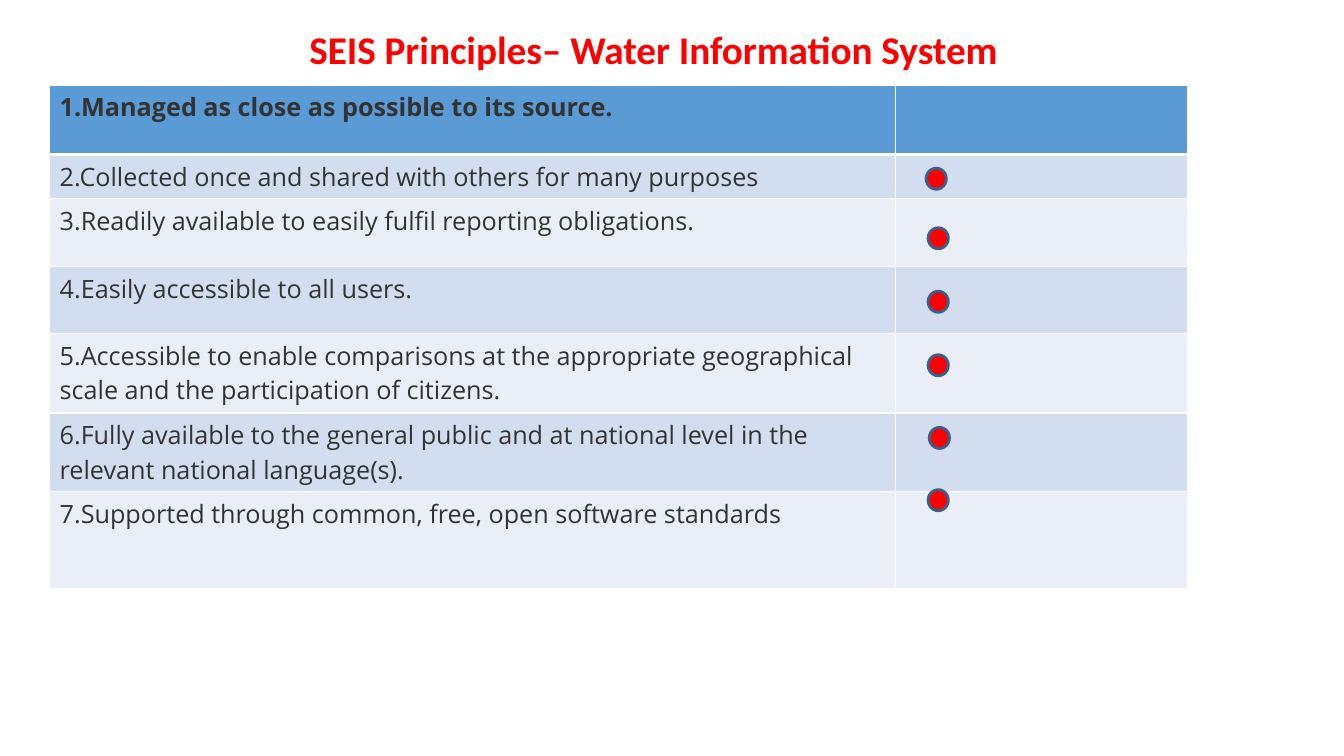
from lxml.etree import SubElement
from pptx import Presentation
from pptx.dml.color import RGBColor
from pptx.enum.shapes import MSO_SHAPE
from pptx.enum.text import MSO_ANCHOR, MSO_AUTO_SIZE, PP_ALIGN
from pptx.oxml import parse_xml
from pptx.oxml.ns import nsdecls, qn
from pptx.util import Cm, Pt

THEME = {
    "red": RGBColor(0xFF, 0x00, 0x00),
    "dot_line": RGBColor(0x3A, 0x5F, 0x8C),
    "header": RGBColor(0x5B, 0x9B, 0xD5),
    "bands": [RGBColor(0xEA, 0xEF, 0xF7), RGBColor(0xD2, 0xDE, 0xEF)],
    "border": "FFFFFF",
    "title": {"name": "Calibri", "size": Pt(28), "bold": True},
    "body": {"name": "Open Sans", "size": Pt(18)},
    "text": RGBColor(0x33, 0x33, 0x33),
}

# Wording and row height in cm; the number of the first row is automatic
PRINCIPLES = [
    ("Managed as close as possible to its source.", 1.75),
    ("2.Collected once and shared with others for many purposes", 1.09),
    ("3.Readily available to easily fulfil reporting obligations.", 1.7),
    ("4.Easily accessible to all users.", 1.7),
    ("5.Accessible to enable comparisons at the appropriate geographical "
     "scale and the participation of citizens.", 2),
    ("6.Fully available to the general public and at national level in the "
     "relevant national language(s).", 1.97),
    ("7.Supported through common, free, open software standards", 2.44),
]
COLUMN_WIDTHS = [21.31, 7.37]
DOTS = [(23.34, 4.24), (23.39, 5.74), (23.39, 7.34),
        (23.39, 8.94), (23.42, 10.77), (23.39, 12.34)]


def style_font(font, values, color):
    for name, value in values.items():
        setattr(font, name, value)
    font.color.rgb = color


def set_borders(cell, widths):
    """Draw cell borders; widths are points for left, right, top, bottom."""
    properties = cell._tc.get_or_add_tcPr()
    for index, (side, width) in enumerate(zip("LRTB", widths)):
        properties.insert(index, parse_xml(
            f'<a:ln{side} {nsdecls("a")} w="{Pt(width)}"><a:solidFill>'
            f'<a:srgbClr val="{THEME["border"]}"/></a:solidFill></a:ln{side}>'))


deck = Presentation()
deck.slide_width, deck.slide_height = Cm(33.87), Cm(19.05)
page = deck.slides.add_slide(deck.slide_layouts[5])

# Title
title = page.shapes.title
title.left, title.top, title.width, title.height = Cm(7.54), Cm(0.64), Cm(24.64), Cm(3.56)
frame = title.text_frame
frame.text = "SEIS Principles– Water Information System"
frame_format = {"vertical_anchor": MSO_ANCHOR.TOP, "word_wrap": True,
                "auto_size": MSO_AUTO_SIZE.NONE}
for name, value in frame_format.items():
    setattr(frame, name, value)
para = frame.paragraphs[0]
para.alignment, para.line_spacing = PP_ALIGN.LEFT, 0.9
style_font(para.runs[0].font, THEME["title"], THEME["red"])

# Table of principles
table = page.shapes.add_table(
    len(PRINCIPLES), len(COLUMN_WIDTHS), Cm(1.25), Cm(2.14),
    Cm(sum(COLUMN_WIDTHS)), Cm(sum(height for _, height in PRINCIPLES))).table
for column, width in zip(table.columns, COLUMN_WIDTHS):
    column.width = Cm(width)

for index, (wording, height) in enumerate(PRINCIPLES):
    table.rows[index].height = Cm(height)
    is_header = index == 0
    for cell in table.rows[index].cells:
        cell.fill.solid()
        cell.fill.fore_color.rgb = THEME["header"] if is_header else THEME["bands"][index % 2]
        set_borders(cell, (1, 1, 3 if index == 1 else 1, 3 if is_header else 1))
    para = table.cell(index, 0).text_frame.paragraphs[0]
    span = para.add_run()
    span.text = wording
    style_font(span.font, THEME["body"] | {"bold": is_header}, THEME["text"])
    if is_header:
        numbering = para._p.get_or_add_pPr()
        numbering.set("marL", "0")
        numbering.set("indent", "0")
        SubElement(numbering, qn("a:buFont"), typeface=THEME["body"]["name"])
        SubElement(numbering, qn("a:buAutoNum"), type="arabicPeriod")

# Red status dots
for left, top in DOTS:
    dot = page.shapes.add_shape(
        MSO_SHAPE.FLOWCHART_CONNECTOR, Cm(left), Cm(top), Cm(0.51), Cm(0.53))
    dot.shadow.inherit = False
    dot.fill.solid()
    dot.fill.fore_color.rgb = THEME["red"]
    dot.line.color.rgb = THEME["dot_line"]
    dot.line.width = Pt(2)

deck.save("out.pptx")
